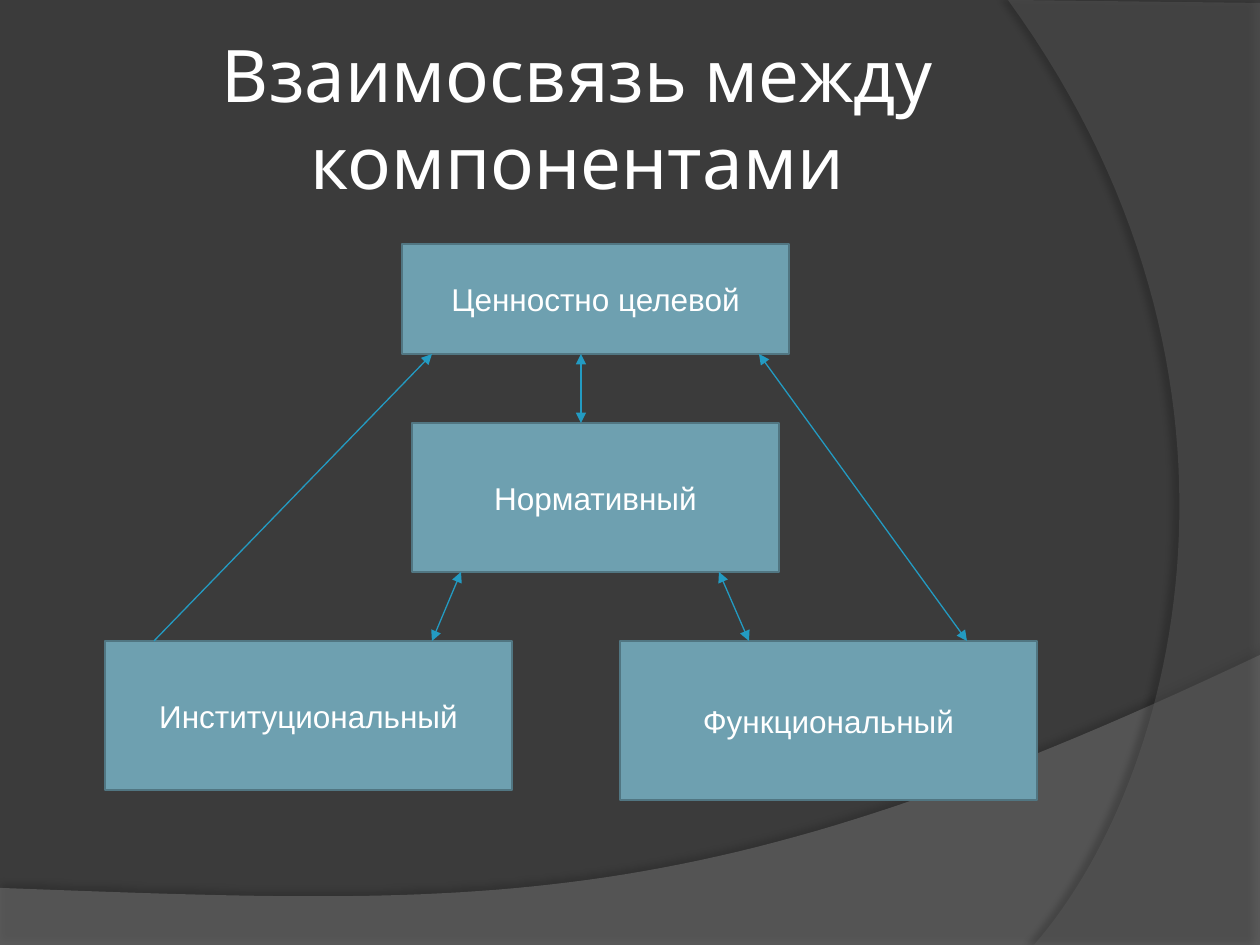
"""Builds a slide that shows how four components are linked."""
from lxml import etree
from pptx import Presentation
from pptx.dml.color import RGBColor
from pptx.enum.shapes import MSO_CONNECTOR, MSO_SHAPE
from pptx.enum.text import MSO_ANCHOR, MSO_AUTO_SIZE, PP_ALIGN
from pptx.oxml.ns import qn
from pptx.util import Pt

RECTANGLE = MSO_SHAPE.RECTANGLE
STRAIGHT = MSO_CONNECTOR.STRAIGHT
MIDDLE = MSO_ANCHOR.MIDDLE
NO_AUTOFIT = MSO_AUTO_SIZE.NONE
CENTER = PP_ALIGN.CENTER

BACKGROUND = RGBColor(0x3B, 0x3B, 0x3B)
LOWER_WAVE = RGBColor(0x7F, 0x7F, 0x7F)
RIGHT_WAVE = RGBColor(0x5E, 0x5E, 0x5E)
SHADOW = RGBColor(0x00, 0x00, 0x00)
BOX_FILL = RGBColor(0x6E, 0xA0, 0xB0)
BOX_LINE = RGBColor(0x51, 0x76, 0x82)
ARROW = RGBColor(0x23, 0x9B, 0xC2)
WHITE = RGBColor(0xFF, 0xFF, 0xFF)

SLIDE_WIDTH, SLIDE_HEIGHT = 1260, 945
EMU_PER_PX = 914400 / 126
CURVE_STEPS = 60

COMPONENTS = [
    ("Ценностно целевой", 402, 244, 387, 110),
    ("Нормативный", 412, 423, 367, 149),
    ("Институциональный", 105, 641, 407, 149),
    ("Функциональный", 620, 641, 417, 159),
]
LINKS = [
    ((154, 641), (432, 354), False),
    ((759, 354), (967, 641), True),
    ((581, 354), (581, 423), True),
    ((461, 572), (432, 641), True),
    ((719, 572), (749, 641), True),
]


def px(length):
    return round(length * EMU_PER_PX)


def curve(start, control_1, control_2, end):
    """Return points along a cubic Bezier curve."""
    points = []
    for step in range(CURVE_STEPS + 1):
        t = step / CURVE_STEPS
        weights = ((1 - t) ** 3, 3 * t * (1 - t) ** 2, 3 * t * t * (1 - t), t ** 3)
        points.append(tuple(
            sum(weight * value for weight, value in zip(weights, axis))
            for axis in zip(start, control_1, control_2, end)
        ))
    return points


def set_font(paragraph, name, size):
    paragraph.alignment = CENTER
    paragraph.font.name = name
    paragraph.font.size = Pt(size)
    paragraph.font.color.rgb = WHITE


def add_alpha(color_element, percent):
    etree.SubElement(color_element, qn("a:alpha"), val=str(percent * 1000))


def add_wave(slide, outline, color, opacity, shadow_opacity, distance, direction):
    """Add a translucent background shape with a soft shadow."""
    points = [(px(x), px(y)) for x, y in outline]
    builder = slide.shapes.build_freeform(*points[0], scale=1.0)
    builder.add_line_segments(points[1:], close=True)
    wave = builder.convert_to_shape()
    wave.fill.solid()
    wave.fill.fore_color.rgb = color
    wave.line.fill.background()
    wave.shadow.inherit = False
    properties = wave.element.spPr
    add_alpha(properties.find(f"{qn('a:solidFill')}/{qn('a:srgbClr')}"), opacity)
    shadow = etree.SubElement(
        properties.find(qn("a:effectLst")), qn("a:outerShdw"),
        blurRad=str(Pt(4)), dist=str(Pt(distance)), dir=str(direction * 60000),
        algn="ctr", rotWithShape="0",
    )
    add_alpha(etree.SubElement(shadow, qn("a:srgbClr"), val=str(SHADOW)), shadow_opacity)


def add_title(slide, text):
    title = slide.shapes.title
    title.left, title.top, title.width, title.height = map(px, (63, 38, 1029, 158))
    frame = title.text_frame
    frame.text = text
    frame.auto_size = NO_AUTOFIT
    frame.word_wrap = True
    frame.vertical_anchor = MIDDLE
    frame.margin_left = frame.margin_right = px(6)
    frame.margin_top = frame.margin_bottom = px(6)
    set_font(frame.paragraphs[0], "Karla", 41.4)
    title.element.getparent().append(title.element)


def add_component(slide, text, left, top, width, height):
    box = slide.shapes.add_shape(RECTANGLE, *map(px, (left, top, width, height)))
    box.shadow.inherit = False
    box.fill.solid()
    box.fill.fore_color.rgb = BOX_FILL
    box.line.color.rgb = BOX_LINE
    box.line.width = Pt(1.5)
    frame = box.text_frame
    frame.text = text
    frame.word_wrap = True
    frame.vertical_anchor = MIDDLE
    set_font(frame.paragraphs[0], "Arial", 18)


def add_link(slide, start, end, two_way):
    link = slide.shapes.add_connector(STRAIGHT, *map(px, start + end))
    link.line.color.rgb = ARROW
    link.line.width = Pt(0.75)
    properties = link.element.spPr
    outline = properties.find(qn("a:ln"))
    for tag in ("a:headEnd", "a:tailEnd") if two_way else ("a:tailEnd",):
        etree.SubElement(outline, qn(tag), type="triangle")
    etree.SubElement(properties, qn("a:effectLst"))


def main():
    presentation = Presentation()
    presentation.slide_width = px(SLIDE_WIDTH)
    presentation.slide_height = px(SLIDE_HEIGHT)
    slide = presentation.slides.add_slide(presentation.slide_layouts.get_by_name("Title Only"))
    slide.background.fill.solid()
    slide.background.fill.fore_color.rgb = BACKGROUND

    lower_edge = curve((1260, 655), (704, 919), (493, 906), (0, 888))
    right_edge = curve((1034, 945), (1178, 780), (1283, 378), (1008, 0))
    add_wave(slide, lower_edge + [(0, SLIDE_HEIGHT), (SLIDE_WIDTH, SLIDE_HEIGHT)],
             LOWER_WAVE, 45, 35, 3.5, 270)
    add_wave(slide, right_edge + [(SLIDE_WIDTH, 3), (SLIDE_WIDTH, SLIDE_HEIGHT)],
             RIGHT_WAVE, 40, 45, 4, 180)

    add_title(slide, "Взаимосвязь между компонентами")
    for component in COMPONENTS:
        add_component(slide, *component)
    for link in LINKS:
        add_link(slide, *link)
    presentation.save("out.pptx")


if __name__ == "__main__":
    main()
